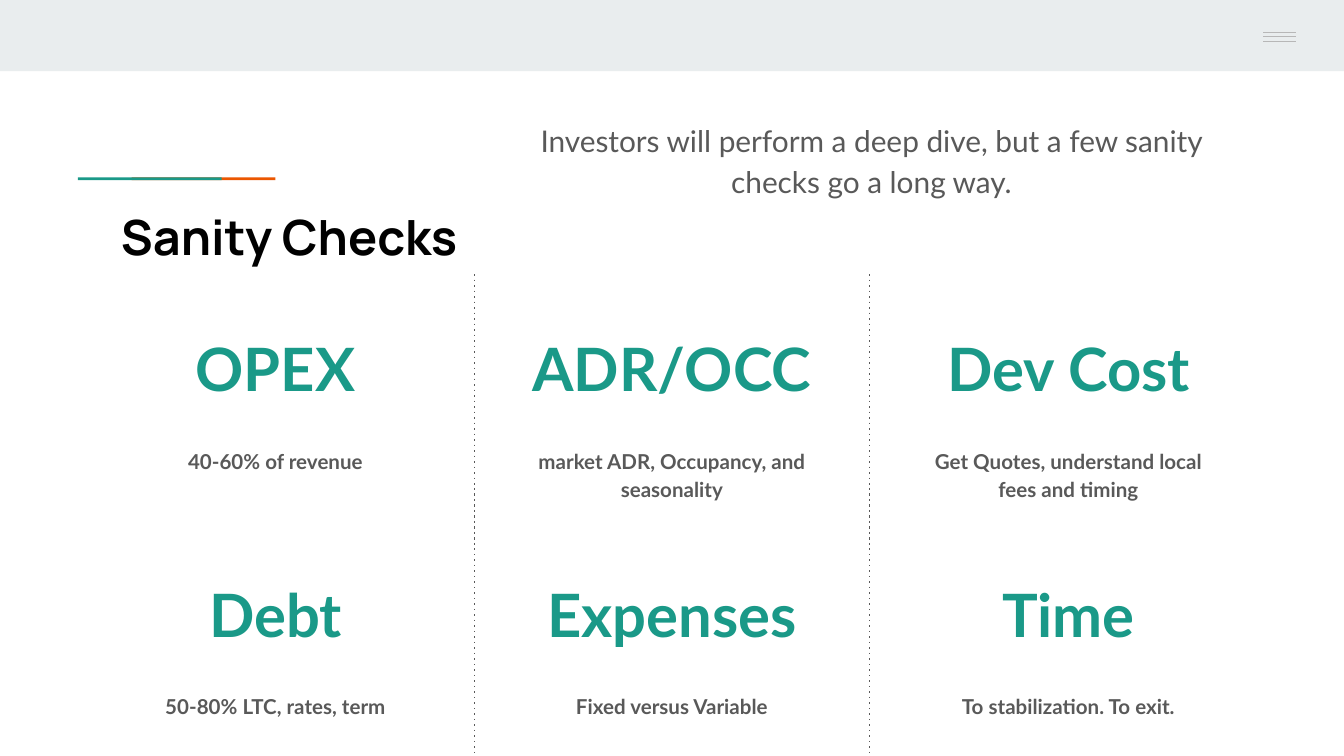
from lxml.etree import SubElement
from pptx import Presentation
from pptx.dml.color import RGBColor
from pptx.enum.shapes import MSO_CONNECTOR, MSO_SHAPE
from pptx.enum.text import MSO_ANCHOR, MSO_AUTO_SIZE, PP_ALIGN
from pptx.oxml.ns import qn
from pptx.util import Inches, Pt

# Content
TITLE = "Sanity Checks"
LEAD = "Investors will perform a deep dive, but a few sanity checks go a long way."
CHECKS = [
    [("OPEX", "40-60% of revenue"),
     ("ADR/OCC", "market ADR, Occupancy, and seasonality"),
     ("Dev Cost", "Get Quotes, understand local fees and timing")],
    [("Debt", "50-80% LTC, rates, term"),
     ("Expenses", "Fixed versus Variable"),
     ("Time", "To stabilization. To exit.")],
]
TEAL, ORANGE, GREY = "1A9988", "EB5600", "595959"
PALE, SILVER, BLACK = "E9EDEE", "B7B7B7", "000000"

# Grid: first cell, steps, and rules between columns
LEFT, COL = 0.79, 2.95
TOPS = [2.29, 4.12]
RULES = [3.53, 6.47]
SPANS = [(2.04, 4.05), (3.63, 5.63)]


def color(code):
    return RGBColor.from_string(code)


def add_bar(x, y, w, h, fill):
    bar = slide.shapes.add_shape(
        MSO_SHAPE.RECTANGLE, Inches(x), Inches(y), Inches(w), Inches(h))
    bar.shadow.inherit = False
    bar.fill.solid()
    bar.fill.fore_color.rgb = color(fill)
    bar.line.fill.background()


def add_line(x1, y1, x2, y2, tint, dash=None):
    line = slide.shapes.add_connector(
        MSO_CONNECTOR.STRAIGHT, Inches(x1), Inches(y1), Inches(x2), Inches(y2))
    line.line.color.rgb = color(tint)
    line.line.width = Pt(0.75)
    if dash:
        SubElement(line.line._get_or_add_ln(), qn("a:prstDash")).set("val", dash)
    SubElement(line._element.spPr, qn("a:effectLst"))


def set_text(shape, text, size, tint, bold, font="Lato", align=PP_ALIGN.CENTER):
    frame = shape.text_frame
    frame.text = text
    frame.word_wrap = True
    frame.auto_size = MSO_AUTO_SIZE.NONE
    frame.vertical_anchor = MSO_ANCHOR.TOP
    frame.margin_left = frame.margin_right = Inches(0.1)
    frame.margin_top = frame.margin_bottom = Inches(0.1)
    para = frame.paragraphs[0]
    para.alignment = align
    style = para.runs[0].font
    style.name, style.size, style.bold = font, Pt(size), bold
    style.color.rgb = color(tint)
    return para


def add_text(x, y, w, h, text, size, tint, bold=True):
    box = slide.shapes.add_textbox(Inches(x), Inches(y), Inches(w), Inches(h))
    para = set_text(box, text, size, tint, bold)
    para.line_spacing = 1.15
    para.space_after = Pt(16)


# Widescreen slide, 16 to 9
deck = Presentation()
deck.slide_width = Inches(10)
deck.slide_height = deck.slide_width * 9 // 16
slide = deck.slides.add_slide(deck.slide_layouts[5])

# Top band with menu icon
add_bar(0, 0, 10, 0.53, PALE)
for y in (0.24, 0.27, 0.31):
    add_line(9.4, y, 9.64, y, SILVER)

# Accent: teal overlaps orange
add_bar(0.98, 1.32, 1.07, 0.02, ORANGE)
add_bar(0.58, 1.32, 1.07, 0.02, TEAL)

# Title and lead
title = slide.shapes.title
title.left, title.top = Inches(0.8), Inches(1.44)
title.width, title.height = Inches(3.06), Inches(1.13)
set_text(title, TITLE, 26, BLACK, True, "Manrope", PP_ALIGN.LEFT)
add_text(3.86, 0.77, 5.25, 0.95, LEAD, 16, GREY, False)

# Checks with dotted rules
for row, top, (start, end) in zip(CHECKS, TOPS, SPANS):
    for i, (head, note) in enumerate(row):
        x = LEFT + i * COL
        add_text(x, top, 2.52, 1.04, head, 32, TEAL)
        add_text(x + 0.13, top + 0.92, 2.26, 0.81, note, 11, GREY)
    for x in RULES:
        add_line(x, start, x, end, GREY, "dot")

deck.save("out.pptx")
